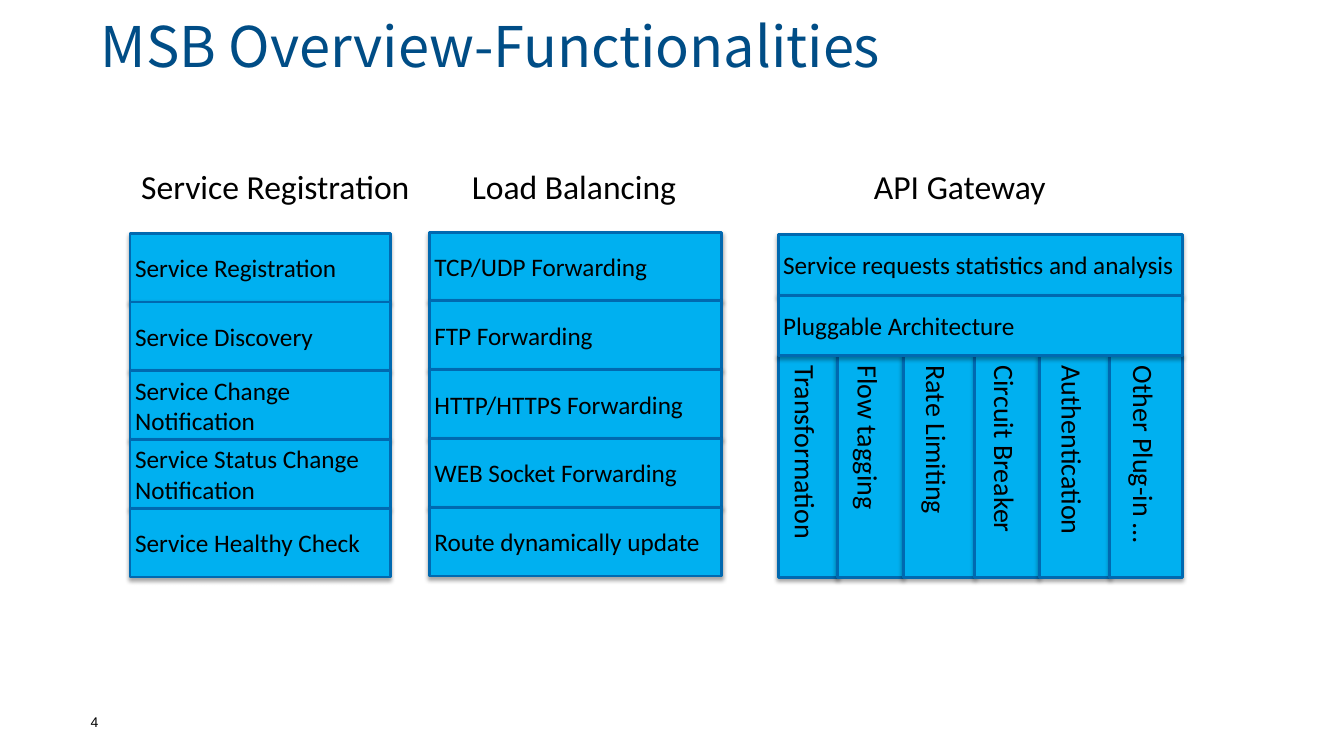
from pptx import Presentation
from pptx.dml.color import RGBColor
from pptx.enum.shapes import MSO_SHAPE as Preset
from pptx.enum.text import MSO_ANCHOR as Anchor, MSO_AUTO_SIZE as AutoSize, PP_ALIGN as Align
from pptx.oxml import parse_xml
from pptx.oxml.ns import nsdecls
from pptx.util import Pt

BLACK = RGBColor(0x00, 0x00, 0x00)
TITLE_BLUE = RGBColor(0x00, 0x4D, 0x86)
TILE_BLUE = RGBColor(0x00, 0xB0, 0xF0)
EDGE_BLUE = RGBColor(0x00, 0x69, 0xB0)

REGISTRATION = [
    "Service Registration",
    "Service Discovery",
    "Service Change Notification",
    "Service Status Change Notification",
    "Service Healthy Check",
]
BALANCING = [
    "TCP/UDP Forwarding",
    "FTP Forwarding",
    "HTTP/HTTPS Forwarding",
    "WEB Socket Forwarding",
    "Route dynamically update",
]
GATEWAY = ["Service requests statistics and analysis", "Pluggable Architecture"]
PLUGINS = [
    ("Transformation", 42.5),
    ("Flow tagging", 47),
    ("Rate Limiting", 51),
    ("Circuit Breaker", 46),
    ("Authentication", 50.5),
    ("Other Plug-in …", 51.7),
]


def write(frame, words, size, font="Calibri", color=BLACK, margins=(0, 0, 0, 0)):
    frame.word_wrap = True
    frame.margin_left, frame.margin_top, frame.margin_right, frame.margin_bottom = map(Pt, margins)
    line = frame.paragraphs[0]
    run = line.add_run()
    run.text = words
    run.font.size = Pt(size)
    run.font.name = font
    run.font.color.rgb = color
    return line


def add_title(slide, left, top, width, height):
    title = slide.shapes.title
    title.left, title.top, title.width, title.height = map(Pt, (left, top, width, height))
    frame = title.text_frame
    frame.auto_size = AutoSize.NONE
    frame.vertical_anchor = Anchor.MIDDLE
    line = write(frame, "MSB Overview-Functionalities", 40, "Noto Sans CJK SC", TITLE_BLUE, (7.2, 0, 0, 0))
    line.alignment = Align.LEFT


def add_page_number(slide, left, top, width, height):
    number = slide.shapes.add_textbox(*map(Pt, (left, top, width, height)))
    write(number.text_frame, "4", 10, "Arial").line_spacing = 0.85


def add_heading(slide, words, left, top, width, height):
    heading = slide.shapes.add_textbox(*map(Pt, (left, top, width, height)))
    write(heading.text_frame, words, 24, margins=(9.4, 5, 9.4, 5))


def add_tile(slide, words, left, top, width, height, vertical=False):
    tile = slide.shapes.add_shape(Preset.RECTANGLE, *map(Pt, (left, top, width, height)))
    tile.fill.solid()
    tile.fill.fore_color.rgb = TILE_BLUE
    tile.line.color.rgb = EDGE_BLUE
    tile.line.width = Pt(2)
    tile.shadow.inherit = False
    shadow = parse_xml(
        f'<a:outerShdw {nsdecls("a")} blurRad="{Pt(3)}" dist="{Pt(1.8)}" dir="5400000" rotWithShape="0">'
        '<a:srgbClr val="000000"><a:alpha val="35000"/></a:srgbClr></a:outerShdw>'
    )
    tile.element.spPr.find("{*}effectLst").append(shadow)
    frame = tile.text_frame
    frame.vertical_anchor = Anchor.MIDDLE
    line = write(frame, words, 20 if vertical else 18, margins=(3.6,) * 4)
    line.alignment = Align.CENTER if vertical else Align.LEFT
    if vertical:
        line.line_spacing = 1.1
        frame._txBody.bodyPr.set("vert", "eaVert")


def add_stack(slide, labels, left, top, width, height):
    row = height / len(labels)
    for index, label in enumerate(labels):
        add_tile(slide, label, left, top + index * row, width, row)


def add_plugins(slide, left, top, width, height):
    scale = width / sum(share for _, share in PLUGINS)
    for label, share in PLUGINS:
        add_tile(slide, label, left, top, share * scale, height, vertical=True)
        left += share * scale


def add_gateway(slide, left, top, width, height):
    layers = 86.4
    add_plugins(slide, left, top + layers, width, height - layers)
    add_stack(slide, GATEWAY, left, top, width, layers)


def main():
    deck = Presentation()
    deck.slide_width, deck.slide_height = Pt(960), Pt(540)
    slide = deck.slides.add_slide(deck.slide_layouts[5])
    add_title(slide, 64.8, 7.9, 853.9, 48.2)
    add_page_number(slide, 64.8, 511.2, 164.9, 36)
    add_gateway(slide, 555.8, 167.6, 288.7, 245)
    add_stack(slide, REGISTRATION, 92.9, 166.6, 185.8, 245.6)
    add_stack(slide, BALANCING, 306.7, 165.8, 208.8, 245.6)
    add_heading(slide, "Service Registration", 91.4, 113.8, 524.9, 38.9)
    add_heading(slide, "Load Balancing", 327.6, 113.8, 177.8, 38.9)
    add_heading(slide, "API Gateway", 614.9, 113.8, 177.8, 38.9)
    deck.save("out.pptx")


if __name__ == "__main__":
    main()
